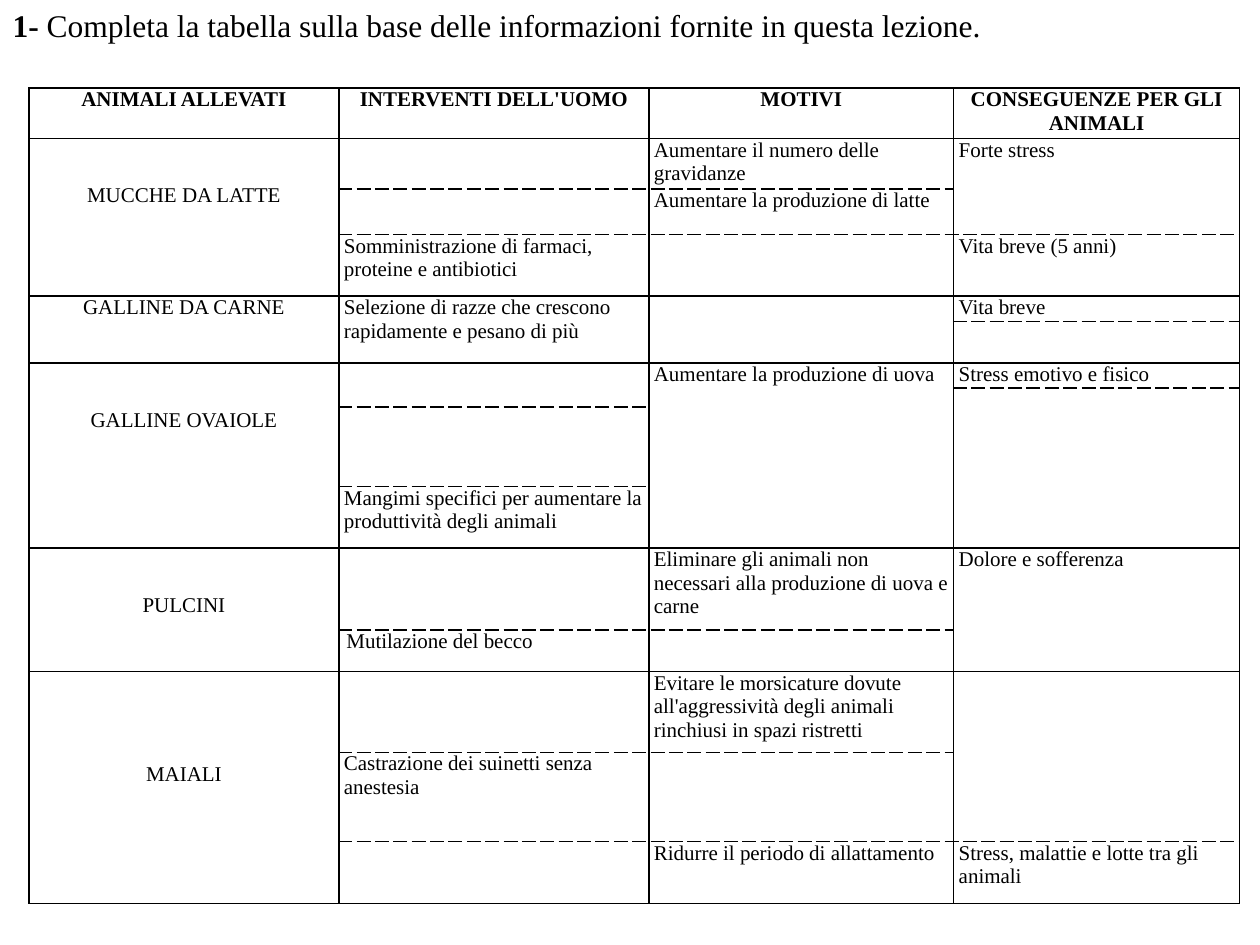
from pptx import Presentation, util as u
from pptx.dml.color import RGBColor
from pptx.enum import text
from pptx.oxml import parse_xml
from pptx.oxml.ns import nsdecls

Inches, Pt = u.Inches, u.Pt
THEME = {
    "font": "Times New Roman",
    "ink": RGBColor(0, 0, 0),
    "paper": RGBColor(255, 255, 255),
    "title": Pt(18),
    "body": Pt(12),
    "empty": Pt(4),
    "border": Pt(1),
}


def add_run(p, words, size, bold):
    r = p.add_run()
    r.text = words
    for name, value in {"name": THEME["font"], "size": size, "bold": bold}.items():
        setattr(r.font, name, value)
    r.font.color.rgb = THEME["ink"]


def add_border(cell, side, dash):
    tcPr = cell._tc.get_or_add_tcPr()
    line = parse_xml(
        f'<a:ln{side} {nsdecls("a")} w="{THEME["border"]}"><a:solidFill>'
        f'<a:srgbClr val="{THEME["ink"]}"/></a:solidFill>'
        f'<a:prstDash val="{dash}"/></a:ln{side}>')
    tcPr.insert(["L", "R", "T", "B"].index(side), line)


prs = Presentation()
prs.slide_width, prs.slide_height = Inches(10), Inches(7.5)
s = prs.slides.add_slide(prs.slide_layouts[5])

title = s.shapes.title
for name, value in {"left": 0, "top": 0, "width": 7.97, "height": 0.4}.items():
    setattr(title, name, Inches(value))
tf = title.text_frame
frame_format = {
    "word_wrap": False,
    "auto_size": text.MSO_AUTO_SIZE.SHAPE_TO_FIT_TEXT,
    "vertical_anchor": text.MSO_ANCHOR.MIDDLE,
}
for name, value in frame_format.items():
    setattr(tf, name, value)
p = tf.paragraphs[0]
p.alignment = text.PP_ALIGN.JUSTIFY
add_run(p, "1- ", THEME["title"], True)
add_run(p, "Completa la tabella sulla base delle informazioni fornite in questa lezione.",
        THEME["title"], False)

# None continues the cell above; an empty string is a cell left to fill in.
rows = [
    ("ANIMALI ALLEVATI", "INTERVENTI DELL'UOMO", "MOTIVI", "CONSEGUENZE PER GLI ANIMALI"),
    ("MUCCHE DA LATTE", "", "Aumentare il numero delle gravidanze", "Forte stress"),
    (None, "", "Aumentare la produzione di latte", None),
    (None, "Somministrazione di farmaci, proteine e antibiotici", "", "Vita breve (5 anni)"),
    ("GALLINE DA CARNE", "Selezione di razze che crescono rapidamente e pesano di più",
     "", "Vita breve"),
    (None, None, None, ""),
    ("GALLINE OVAIOLE", "", "Aumentare la produzione di uova", "Stress emotivo e fisico"),
    (None, None, None, ""),
    (None, "", None, None),
    (None, "Mangimi specifici per aumentare la produttività degli animali", None, None),
    ("PULCINI", "", "Eliminare gli animali non necessari alla produzione di uova e carne",
     "Dolore e sofferenza"),
    (None, "Mutilazione del becco", "", None),
    ("MAIALI", "", "Evitare le morsicature dovute all'aggressività degli animali "
     "rinchiusi in spazi ristretti", ""),
    (None, "Castrazione dei suinetti senza anestesia", "", None),
    (None, "", "Ridurre il periodo di allattamento", "Stress, malattie e lotte tra gli animali"),
]
widths = [2.46, 2.46, 2.42, 2.27]
heights = [0.4, 0.4, 0.36, 0.49, 0.2, 0.33, 0.2, 0.15, 0.63, 0.49, 0.65, 0.33, 0.64, 0.71, 0.49]
top_margins = {"MUCCHE DA LATTE": 0.36, "GALLINE OVAIOLE": 0.36, "PULCINI": 0.36, "MAIALI": 0.72}
left_margins = {"Mutilazione del becco": 0.06}
group_edges = {i for i, row in enumerate(rows) if row[0]} | {len(rows)}

table = s.shapes.add_table(len(rows), len(widths), Inches(0.23), Inches(0.7),
                           Inches(sum(widths)), Inches(sum(heights))).table
table.first_row = table.horz_banding = False
for column, width in zip(table.columns, widths):
    column.width = Inches(width)
for row, height in zip(table.rows, heights):
    row.height = Inches(height)

for i, row in enumerate(rows):
    for j, words in enumerate(row):
        cell = table.cell(i, j)
        margins = {"left": left_margins.get(words, 0.04), "right": 0.04,
                   "top": top_margins.get(words, 0), "bottom": 0}
        for side, value in margins.items():
            setattr(cell, f"margin_{side}", Inches(value))
        cell.fill.solid()
        cell.fill.fore_color.rgb = THEME["paper"]
        p = cell.text_frame.paragraphs[0]
        if words:
            p.alignment = text.PP_ALIGN.CENTER if i == 0 or j == 0 else text.PP_ALIGN.LEFT
            add_run(p, words, THEME["body"], i == 0)
        else:
            p._p.append(parse_xml(
                f'<a:endParaRPr {nsdecls("a")} sz="{int(THEME["empty"].pt * 100)}"/>'))

        end = i + 1
        while end < len(rows) and rows[end][j] is None:
            end += 1
        add_border(cell, "L", "solid")
        add_border(cell, "R", "solid")
        if words is not None:
            add_border(cell, "T", "solid" if i in group_edges else "dash")
            if end > i + 1:
                cell.merge(table.cell(end - 1, j))
        if words is not None or end == i + 1:
            add_border(cell, "B", "solid" if end in group_edges else "dash")

prs.save("out.pptx")
